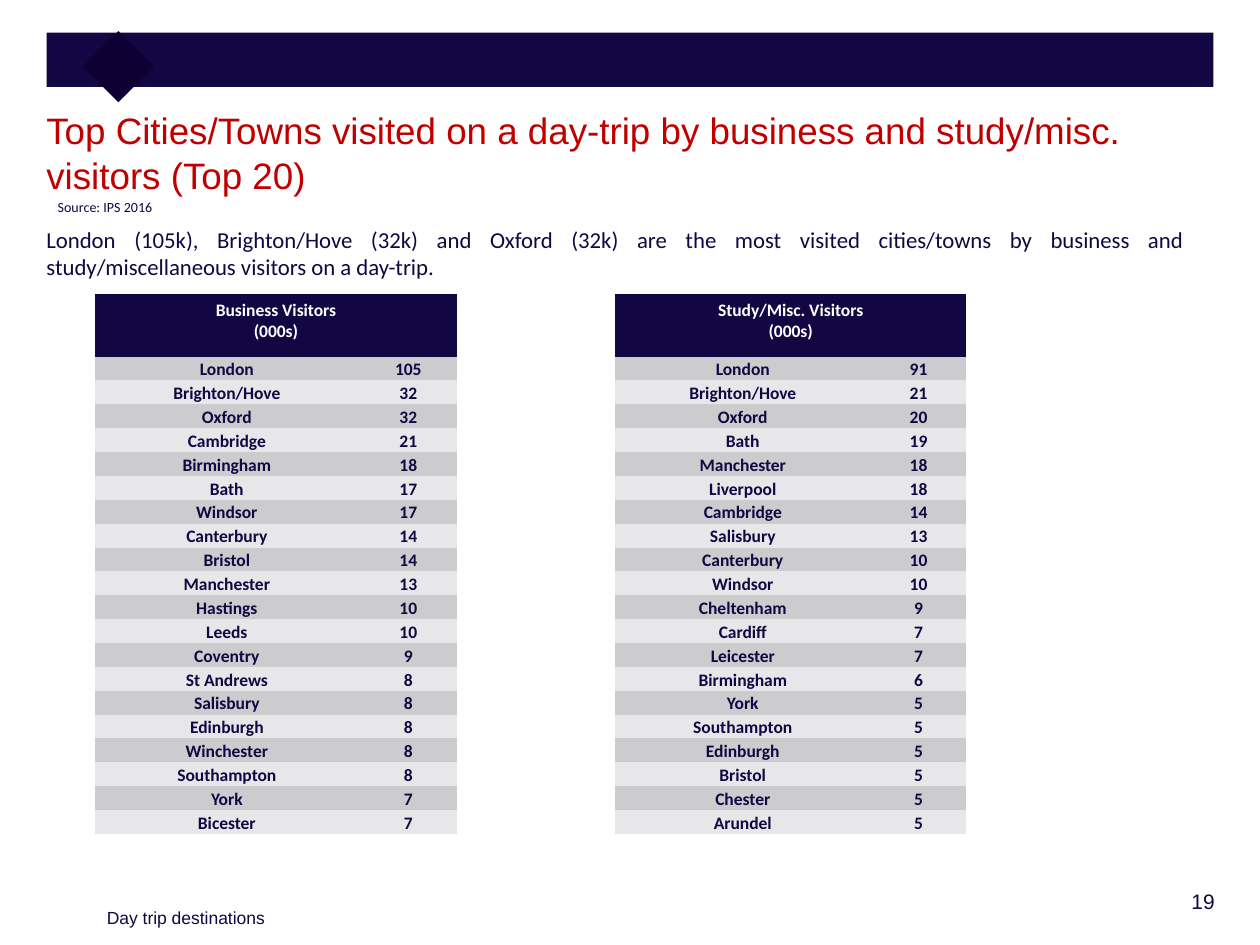
from pptx import Presentation
from pptx.dml.color import RGBColor
from pptx.enum.shapes import MSO_SHAPE
from pptx.enum.text import MSO_ANCHOR, PP_ALIGN
from pptx.oxml.ns import qn
from pptx.util import Inches, Pt

SLIDE_WIDTH, SLIDE_HEIGHT = Inches(10), Inches(7.5)
NAVY, DARK_NAVY, RED, WHITE = "120742", "0E0033", "C00000", "FFFFFF"
BANDS = ("CCCCCF", "E7E7E9")
NO_STYLE = "{2D5ABB26-0587-4C30-8999-92F81FD0307C}"

BUSINESS = [
    ("London", 105), ("Brighton/Hove", 32), ("Oxford", 32), ("Cambridge", 21),
    ("Birmingham", 18), ("Bath", 17), ("Windsor", 17), ("Canterbury", 14),
    ("Bristol", 14), ("Manchester", 13), ("Hastings", 10), ("Leeds", 10),
    ("Coventry", 9), ("St Andrews", 8), ("Salisbury", 8), ("Edinburgh", 8),
    ("Winchester", 8), ("Southampton", 8), ("York", 7), ("Bicester", 7),
]
STUDY = [
    ("London", 91), ("Brighton/Hove", 21), ("Oxford", 20), ("Bath", 19),
    ("Manchester", 18), ("Liverpool", 18), ("Cambridge", 14), ("Salisbury", 13),
    ("Canterbury", 10), ("Windsor", 10), ("Cheltenham", 9), ("Cardiff", 7),
    ("Leicester", 7), ("Birmingham", 6), ("York", 5), ("Southampton", 5),
    ("Edinburgh", 5), ("Bristol", 5), ("Chester", 5), ("Arundel", 5),
]


def across(percent):
    return round(SLIDE_WIDTH * percent / 100)


def down(percent):
    return round(SLIDE_HEIGHT * percent / 100)


def place(left, top, width, height):
    """Turn percentages of the slide into a position and a size."""
    return across(left), down(top), across(width), down(height)


def color(value):
    return RGBColor.from_string(value)


def write(frame, lines, size, font, text_color, align=PP_ALIGN.LEFT, bold=False):
    paragraph = frame.paragraphs[0]
    paragraph.alignment = align
    for index, line in enumerate(lines):
        if index:
            paragraph.add_line_break()
        run = paragraph.add_run()
        run.text = line
        run.font.size = Pt(size)
        run.font.name = font
        run.font.bold = bold
        run.font.color.rgb = color(text_color)


def add_text(slide, box, lines, size, font, text_color=NAVY, align=PP_ALIGN.LEFT):
    frame = slide.shapes.add_textbox(*place(*box)).text_frame
    frame.word_wrap = True
    write(frame, lines, size, font, text_color, align)


def add_block(slide, box, fill, rotation=0):
    shape = slide.shapes.add_shape(MSO_SHAPE.RECTANGLE, *place(*box))
    shape.shadow.inherit = False
    shape.fill.solid()
    shape.fill.fore_color.rgb = color(fill)
    shape.line.fill.background()
    shape.rotation = rotation


def fill_cell(cell, lines, fill, text_color):
    cell.fill.solid()
    cell.fill.fore_color.rgb = color(fill)
    write(cell.text_frame, lines, 10, "Calibri", text_color, PP_ALIGN.CENTER, True)


def add_ranking(slide, left, columns, heading, ranking):
    header_height, row_height = 6.67, 2.53
    box = (left, 31.07, sum(columns), header_height + row_height * len(ranking))
    table = slide.shapes.add_table(len(ranking) + 1, 2, *place(*box)).table
    table._tbl.tblPr.find(qn("a:tableStyleId")).text = NO_STYLE
    table.first_row = table.horz_banding = False
    for column, width in zip(table.columns, columns):
        column.width = across(width)

    # Heading across both columns
    table.rows[0].height = down(header_height)
    table.cell(0, 0).merge(table.cell(0, 1))
    fill_cell(table.cell(0, 0), heading, NAVY, WHITE)

    # One banded row for each place
    for row, entry in enumerate(ranking, start=1):
        table.rows[row].height = down(row_height)
        for column, value in enumerate(entry):
            cell = table.cell(row, column)
            cell.vertical_anchor = MSO_ANCHOR.BOTTOM
            cell.margin_left = cell.margin_right = cell.margin_top = Inches(0.01)
            cell.margin_bottom = 0
            fill_cell(cell, [str(value)], BANDS[(row - 1) % 2], NAVY)


def main():
    presentation = Presentation()
    presentation.slide_width = SLIDE_WIDTH
    presentation.slide_height = SLIDE_HEIGHT
    slide = presentation.slides.add_slide(presentation.slide_layouts[6])

    # Banner with its diamond
    add_block(slide, (3.7, 3.47, 92.6, 5.73), NAVY)
    add_block(slide, (7.4, 4.4, 4, 5.33), DARK_NAVY, rotation=45)

    # Title and source
    add_text(slide, (2.7, 10.8, 97.3, 8.13),
             ["Top Cities/Towns visited on a day-trip by business and study/misc.",
              "visitors (Top 20)"], 21, "Arial", RED)
    add_text(slide, (3.6, 20.4, 46.6, 2.8), ["Source: IPS 2016"], 8, "Calibri")

    # Rankings
    add_ranking(slide, 7.5, (21, 7.8), ["Business Visitors", "(000s)"], BUSINESS)
    add_ranking(slide, 48.8, (20.3, 7.6), ["Study/Misc. Visitors", "(000s)"], STUDY)

    # Key finding
    add_text(slide, (2.7, 23.2, 92.1, 27.07),
             ["London (105k), Brighton/Hove (32k) and Oxford (32k) are the most "
              "visited cities/towns by business and study/miscellaneous visitors "
              "on a day-trip."], 13, "Calibri", align=PP_ALIGN.JUSTIFY)

    # Footer
    add_text(slide, (7.5, 95.33, 26.7, 4), ["Day trip destinations"], 10, "Arial")
    add_text(slide, (85.3, 93.33, 12.1, 4.8), ["19"], 12, "Arial",
             align=PP_ALIGN.RIGHT)

    presentation.save("out.pptx")


if __name__ == "__main__":
    main()
